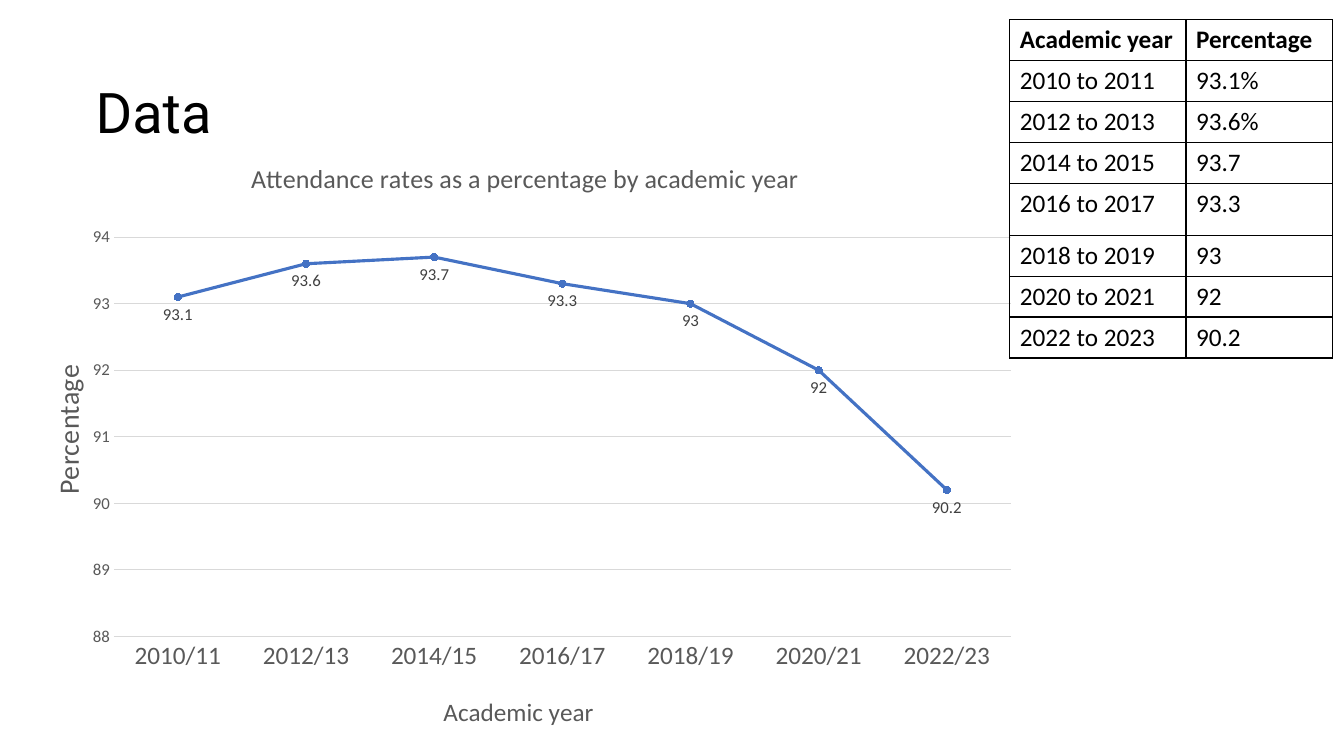
from lxml import etree
from pptx import Presentation
from pptx.chart.data import CategoryChartData
from pptx.dml.color import RGBColor
from pptx.enum.chart import XL_CHART_TYPE, XL_LABEL_POSITION, XL_MARKER_STYLE, XL_TICK_MARK
from pptx.enum.text import MSO_ANCHOR
from pptx.oxml import parse_xml
from pptx.oxml.ns import nsdecls, qn
from pptx.util import Cm, Pt

LINE = XL_CHART_TYPE.LINE_MARKERS
BELOW = XL_LABEL_POSITION.BELOW
CIRCLE = XL_MARKER_STYLE.CIRCLE
NO_TICK = XL_TICK_MARK.NONE
MIDDLE = MSO_ANCHOR.MIDDLE

# Content
HEAD = "Data"
TITLE = "Attendance rates as a percentage by academic year"
X_NAME, Y_NAME = "Academic year", "Percentage"
YEARS = ["2010/11", "2012/13", "2014/15", "2016/17", "2018/19", "2020/21", "2022/23"]
RATES = [93.1, 93.6, 93.7, 93.3, 93, 92, 90.2]
ROWS = [
    ("Academic year", "Percentage"),
    ("2010 to 2011", "93.1%"),
    ("2012 to 2013", "93.6%"),
    ("2014 to 2015", "93.7"),
    ("2016 to 2017", "93.3"),
    ("2018 to 2019", "93"),
    ("2020 to 2021", "92"),
    ("2022 to 2023", "90.2"),
]
COLS = [4.44, 3.69]
ROW_H, TALL_H, TALL = 1.03, 1.31, 4
BLACK, GREY, DARK, PALE, BLUE = "000000", "595959", "404040", "D9D9D9", "4472C4"


def rgb(code):
    return RGBColor.from_string(code)


def style(font, size, color=BLACK, face="Calibri", bold=False):
    font.size, font.name, font.bold = Pt(size), face, bold
    font.color.rgb = rgb(color)


def write(frame, text, **form):
    """Put one line of text in a frame."""
    para = frame.paragraphs[0]
    run = para.add_run()
    run.text = text
    style(run.font, **form)
    return para


def stroke(line, color, width):
    line.color.rgb = rgb(color)
    line.width = Pt(width)


def place(node, x, y, w=None, h=None):
    """Set a manual layout, in fractions of the chart."""
    old = node.find(qn("c:layout"))
    if old is not None:
        node.remove(old)
    lay = parse_xml(f"<c:layout {nsdecls('c')}><c:manualLayout/></c:layout>")
    vals = [("xMode", "edge"), ("yMode", "edge"), ("x", x), ("y", y)]
    if w:
        vals = [("layoutTarget", "inner")] + vals + [("w", w), ("h", h)]
    for tag, val in vals:
        etree.SubElement(lay[0], qn("c:" + tag)).set("val", str(val))
    text = node.find(qn("c:tx"))
    if text is not None:
        text.addnext(lay)
    else:
        node.insert(0, lay)


def name(owner, get_title, text, size, x, y):
    """Title a chart or an axis."""
    title = get_title(owner)
    write(title.text_frame, text, size=size, color=GREY)
    place(title._element, x, y)


def border(cell):
    props = cell._tc.get_or_add_tcPr()
    for i, side in enumerate(("lnL", "lnR", "lnT", "lnB")):
        props.insert(i, parse_xml(
            f'<a:{side} {nsdecls("a")} w="12700"><a:solidFill>'
            f'<a:srgbClr val="{BLACK}"/></a:solidFill></a:{side}>'))


def add_head(slide):
    box = slide.shapes.add_textbox(Cm(2.16), Cm(1.73), Cm(7.06), Cm(2.36))
    frame = box.text_frame
    frame.word_wrap, frame.vertical_anchor = True, MIDDLE
    write(frame, HEAD, size=40, face="Roboto").line_spacing = 0.9


def add_graph(slide):
    data = CategoryChartData()
    data.categories = YEARS
    data.add_series("Series 1", RATES)
    chart = slide.shapes.add_chart(
        LINE, Cm(0.28), Cm(3.33), Cm(26.95), Cm(15.21), data).chart
    style(chart.font, 10)
    chart.has_legend = False

    # Axes
    x_axis, y_axis = chart.category_axis, chart.value_axis
    for axis, size in ((x_axis, 18), (y_axis, 12)):
        axis.major_tick_mark = axis.minor_tick_mark = NO_TICK
        style(axis.tick_labels.font, size, GREY)
    stroke(x_axis.format.line, PALE, 0.75)
    y_axis.format.line.fill.background()
    y_axis.minimum_scale, y_axis.maximum_scale, y_axis.major_unit = 88, 94, 1
    stroke(y_axis.major_gridlines.format.line, PALE, 0.75)

    # Titles and plot area
    name(chart, lambda c: c.chart_title, TITLE, 18.6, 0.22, 0.04)
    name(x_axis, lambda a: a.axis_title, X_NAME, 18, 0.4, 0.93)
    name(y_axis, lambda a: a.axis_title, Y_NAME, 20, 0.03, 0.38)
    place(chart._chartSpace.chart.plotArea, 0.096, 0.175, 0.839, 0.665)

    # Line, markers and labels
    plot = chart.plots[0]
    plot.vary_by_categories = False
    line = plot.series[0]
    line.smooth = False
    stroke(line.format.line, BLUE, 2.25)
    mark = line.marker
    mark.style, mark.size = CIRCLE, 5
    mark.format.fill.solid()
    mark.format.fill.fore_color.rgb = rgb(BLUE)
    stroke(mark.format.line, BLUE, 0.75)
    labels = line.data_labels
    labels.show_value, labels.position = True, BELOW
    style(labels.font, 12, DARK)


def add_grid(slide):
    highs = [TALL_H if i == TALL else ROW_H for i in range(len(ROWS))]
    table = slide.shapes.add_table(
        len(ROWS), len(COLS), Cm(25.45), Cm(0.5), Cm(sum(COLS)), Cm(sum(highs))).table
    table.first_row = table.horz_banding = False
    for col, wide in zip(table.columns, COLS):
        col.width = Cm(wide)
    for i, (row, high) in enumerate(zip(table.rows, highs)):
        row.height = Cm(high)
        for cell, text in zip(row.cells, ROWS[i]):
            cell.fill.background()
            write(cell.text_frame, text, size=18, bold=i == 0)
            border(cell)


def main():
    deck = Presentation()
    deck.slide_width, deck.slide_height = Cm(33.87), Cm(19.05)
    slide = deck.slides.add_slide(deck.slide_layouts[6])
    add_head(slide)
    add_graph(slide)
    add_grid(slide)
    deck.save("out.pptx")


if __name__ == "__main__":
    main()
